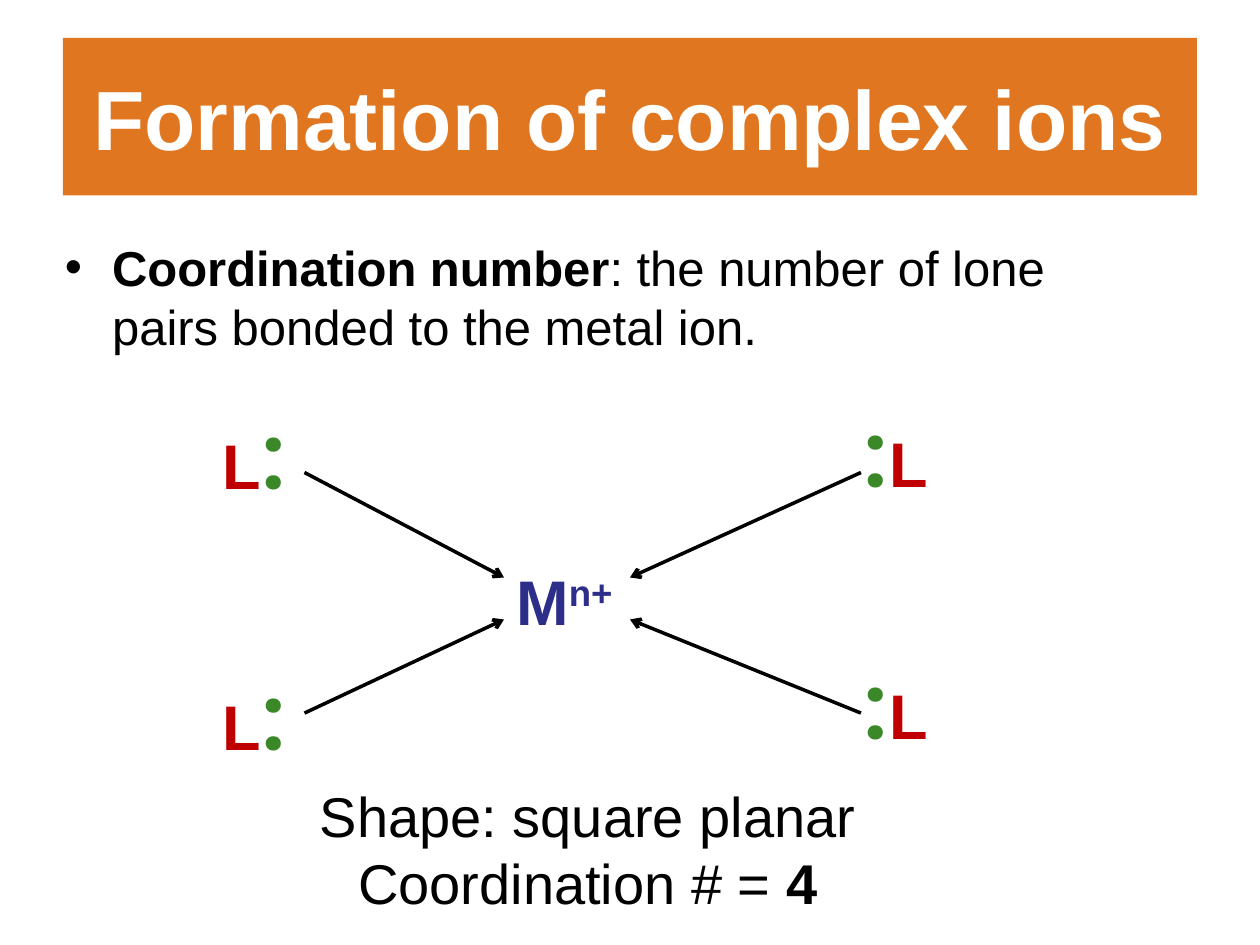
from lxml.etree import SubElement
from pptx import Presentation
from pptx.dml.color import RGBColor
from pptx.enum.shapes import MSO_CONNECTOR, MSO_SHAPE
from pptx.enum.text import MSO_ANCHOR, PP_ALIGN
from pptx.oxml.ns import qn
from pptx.util import Pt

ORANGE, WHITE, BLACK = "E07720", "FFFFFF", "000000"
METAL_BLUE, LIGAND_RED, PAIR_GREEN = "2D2D8A", "C00000", "3A8828"


def color(hex_string):
    return RGBColor.from_string(hex_string)


def add_text(paragraph, text, size=28, font="Arial", fill=BLACK, bold=False, superscript=0):
    run = paragraph.add_run()
    run.text = text
    run.font.size = Pt(size)
    run.font.name = font
    run.font.bold = bold
    run.font.color.rgb = color(fill)
    if superscript:
        run._r.get_or_add_rPr().set("baseline", str(superscript * 1000))


class SlideBuilder:
    """Holds the current slide and the look of its elements."""

    arrow_width = 2

    def __init__(self, slide):
        self.slide = slide

    def banner(self, left, top, width, height, title):
        band = self.slide.shapes.add_shape(
            MSO_SHAPE.RECTANGLE, Pt(left), Pt(top), Pt(width), Pt(height))
        band.shadow.inherit = False
        band.fill.solid()
        band.fill.fore_color.rgb = color(ORANGE)
        band.line.fill.background()
        band.text_frame.vertical_anchor = MSO_ANCHOR.MIDDLE
        heading = band.text_frame.paragraphs[0]
        heading.alignment = PP_ALIGN.CENTER
        add_text(heading, title, size=48, fill=WHITE, bold=True)

    def text_box(self, left, top, width, height, *lines, align=PP_ALIGN.LEFT):
        """Each line is a list of (text, format) pairs."""
        frame = self.slide.shapes.add_textbox(
            Pt(left), Pt(top), Pt(width), Pt(height)).text_frame
        frame.word_wrap = True
        for index, line in enumerate(lines):
            paragraph = frame.add_paragraph() if index else frame.paragraphs[0]
            paragraph.alignment = align
            for text, style in line:
                add_text(paragraph, text, **style)
        return frame

    def bullet(self, left, top, width, height, line, indent=27):
        paragraph = self.text_box(left, top, width, height, line).paragraphs[0]
        paragraph.space_before = Pt(3.6)
        properties = paragraph._p.get_or_add_pPr()
        properties.set("marL", str(Pt(indent)))
        properties.set("indent", str(-Pt(indent)))
        SubElement(properties, qn("a:buFont"), typeface="Arial")
        SubElement(properties, qn("a:buChar"), char="•")

    def ligand(self, left, top, pair_first):
        letter = ("L", dict(size=36, fill=LIGAND_RED, bold=True))
        lone_pair = (":", dict(size=54, font="Roboto", fill=PAIR_GREEN, bold=True))
        line = [lone_pair, letter] if pair_first else [letter, lone_pair]
        self.text_box(left, top, 66, 73, line)

    def arrow(self, start, end):
        bond = self.slide.shapes.add_connector(
            MSO_CONNECTOR.STRAIGHT, *map(Pt, start), *map(Pt, end))
        bond.line.color.rgb = color(BLACK)
        bond.line.width = Pt(self.arrow_width)
        SubElement(bond.line._get_or_add_ln(), qn("a:tailEnd"), type="arrow")
        SubElement(bond._element.spPr, qn("a:effectLst"))


def main():
    deck = Presentation()
    deck.slide_width, deck.slide_height = Pt(720), Pt(540)
    builder = SlideBuilder(deck.slides.add_slide(deck.slide_layouts[6]))

    # Title and definition
    builder.banner(36, 21.6, 648, 90, "Formation of complex ions")
    builder.bullet(30, 132, 642, 356, [
        ("Coordination number", dict(bold=True)),
        (": the number of lone pairs bonded to the metal ion.", {})])

    # Central metal ion
    metal = dict(size=36, fill=METAL_BLUE, bold=True)
    builder.text_box(288, 318, 96, 51, [("M", metal), ("n+", dict(metal, superscript=30))])

    # Ligands on both sides, each donating a lone pair to the metal
    sides = [  # ligand left, ligand tops, arrow start x, arrow end x, pair first
        (120, (222, 371.5), 174, 288, False),
        (486, (221, 365), 492, 360, True),
    ]
    arrow_rows = [(270, 330), (407.5, 354)]  # start y, end y
    for ligand_left, tops, start_x, end_x, pair_first in sides:
        for ligand_top, (start_y, end_y) in zip(tops, arrow_rows):
            builder.ligand(ligand_left, ligand_top, pair_first)
            builder.arrow((start_x, start_y), (end_x, end_y))

    # Resulting geometry
    summary = dict(size=32)
    builder.text_box(
        96, 443, 480, 85,
        [("Shape: square planar", summary)],
        [("Coordination # = ", summary), ("4", dict(summary, bold=True))],
        align=PP_ALIGN.CENTER)

    deck.save("out.pptx")


if __name__ == "__main__":
    main()
